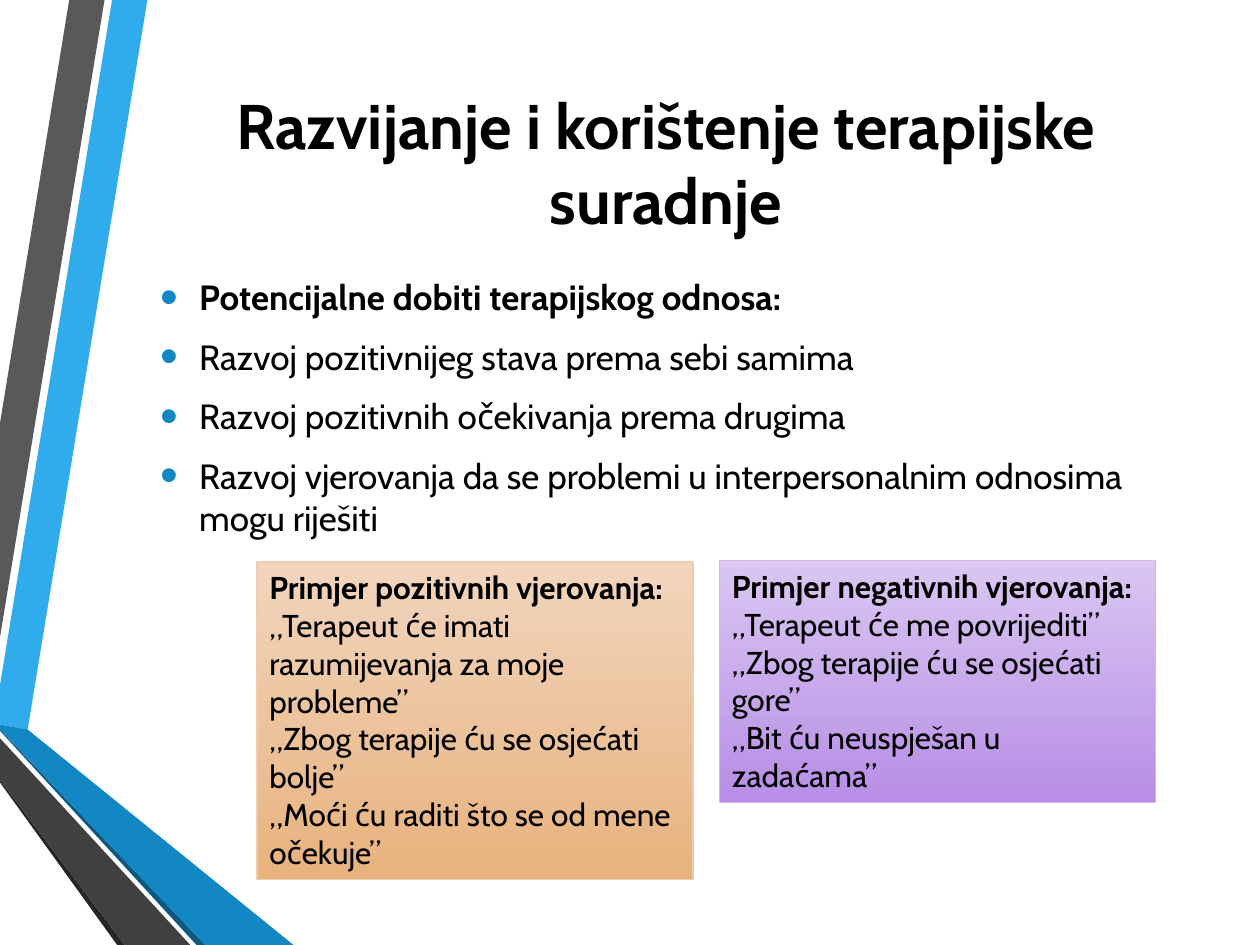
"""Build the slide on developing and using therapeutic collaboration."""
from dataclasses import dataclass

from lxml import etree
from pptx import Presentation
from pptx.dml.color import RGBColor
from pptx.enum.shapes import MSO_SHAPE
from pptx.enum.text import MSO_ANCHOR, MSO_AUTO_SIZE, PP_ALIGN
from pptx.oxml.ns import qn
from pptx.util import Inches, Pt

RECTANGLE = MSO_SHAPE.RECTANGLE
MIDDLE, TOP = MSO_ANCHOR.MIDDLE, MSO_ANCHOR.TOP
NO_AUTOFIT = MSO_AUTO_SIZE.NONE
CENTER, LEFT = PP_ALIGN.CENTER, PP_ALIGN.LEFT


@dataclass(frozen=True)
class Theme:
    font: str = "Cabin"
    text: str = "000000"
    bullet: str = "1287C3"
    title_size: int = 36
    body_size: int = 20
    example_size: int = 18


@dataclass(frozen=True)
class Band:
    color: str
    points: tuple[tuple[float, float], ...]


@dataclass(frozen=True)
class Example:
    left: float
    top: float
    height: float
    gradient: tuple[str, str]
    border: str
    lines: tuple[str, ...]


THEME = Theme()
EXAMPLE_WIDTH = 3.46
BULLET_INDENT = 0.31

BANDS = (
    Band("30ACEC", ((0, 5.44), (0, 5.75), (0.22, 5.79), (1.17, 0), (0.89, 0))),
    Band("595959", ((0.83, 0), (0.55, 0), (0, 3.36), (0, 5.06))),
    Band("262626", ((0, 6.19), (0, 6.21), (0.93, 7.5), (0.99, 7.5))),
    Band("0C5A82", ((0, 5.79), (0, 5.8), (1.56, 7.5), (1.63, 7.5))),
    Band("1287C3", ((0, 5.79), (1.63, 7.5), (2.33, 7.5), (0.22, 5.79), (0, 5.75))),
    Band("404040", ((0, 6.19), (0.99, 7.5), (1.51, 7.5), (0, 5.86))),
)

TITLE = "Razvijanje i korištenje terapijske suradnje"
BENEFITS = (
    "Potencijalne dobiti terapijskog odnosa:",
    "Razvoj pozitivnijeg stava prema sebi samima",
    "Razvoj pozitivnih očekivanja prema drugima",
    "Razvoj vjerovanja da se problemi u interpersonalnim odnosima mogu riješiti",
)
EXAMPLES = (
    Example(2.04, 4.46, 2.52, ("F1D5BD", "E7B27D"), "EECCAF", (
        "Primjer pozitivnih vjerovanja:",
        "„Terapeut će imati razumijevanja za moje probleme”",
        "„Zbog terapije ću se osjećati bolje”",
        "„Moći ću raditi što se od mene očekuje”",
    )),
    Example(5.71, 4.45, 1.92, ("D9C6F1", "B88EE6"), "D0B8EE", (
        "Primjer negativnih vjerovanja:",
        "„Terapeut će me povrijediti”",
        "„Zbog terapije ću se osjećati gore”",
        "„Bit ću neuspješan u zadaćama”",
    )),
)


def rgb(color: str) -> RGBColor:
    return RGBColor.from_string(color)


def place(shape, left: float, top: float, width: float, height: float) -> None:
    shape.left, shape.top = Inches(left), Inches(top)
    shape.width, shape.height = Inches(width), Inches(height)


def write(shape, lines, *, size: int, align=LEFT, anchor=MIDDLE,
          before: float = 0, after: float = 0) -> None:
    """Fill a shape with paragraphs, the first one bold."""
    frame = shape.text_frame
    frame.auto_size = NO_AUTOFIT
    frame.word_wrap = True
    frame.vertical_anchor = anchor
    for index, line in enumerate(lines):
        paragraph = frame.add_paragraph() if index else frame.paragraphs[0]
        paragraph.alignment = align
        paragraph.space_before, paragraph.space_after = Pt(before), Pt(after)
        run = paragraph.add_run()
        run.text = line
        run.font.name = THEME.font
        run.font.size = Pt(size)
        run.font.bold = index == 0
        run.font.color.rgb = rgb(THEME.text)


def add_bullet(paragraph) -> None:
    """Give a paragraph a large coloured bullet with a hanging indent."""
    properties = paragraph._p.get_or_add_pPr()
    properties.set("marL", str(Inches(BULLET_INDENT)))
    properties.set("indent", str(-Inches(BULLET_INDENT)))
    color = etree.SubElement(properties, qn("a:buClr"))
    etree.SubElement(color, qn("a:srgbClr"), val=THEME.bullet)
    etree.SubElement(properties, qn("a:buSzPct"), val="145000")
    etree.SubElement(properties, qn("a:buFont"), typeface="Arial")
    etree.SubElement(properties, qn("a:buChar"), char="•")


def draw_band(slide, band: Band) -> None:
    points = [(Inches(x), Inches(y)) for x, y in band.points]
    builder = slide.shapes.build_freeform(*points[0])
    builder.add_line_segments(points[1:], close=True)
    shape = builder.convert_to_shape()
    shape.shadow.inherit = False
    shape.fill.solid()
    shape.fill.fore_color.rgb = rgb(band.color)
    shape.line.fill.background()


def draw_example(slide, example: Example) -> None:
    shape = slide.shapes.add_shape(
        RECTANGLE, Inches(example.left), Inches(example.top),
        Inches(EXAMPLE_WIDTH), Inches(example.height))
    shape.shadow.inherit = False
    shape.fill.gradient()
    shape.fill.gradient_angle = 270
    for position, (stop, color) in enumerate(zip(shape.fill.gradient_stops, example.gradient)):
        stop.color.rgb = rgb(color)
        stop.position = position
    shape.line.color.rgb = rgb(example.border)
    shape.line.width = Pt(0.75)
    write(shape, example.lines, size=THEME.example_size, anchor=TOP)


def main() -> None:
    presentation = Presentation()
    presentation.slide_width, presentation.slide_height = Inches(10), Inches(7.5)
    slide = presentation.slides.add_slide(presentation.slide_layouts[1])
    for band in BANDS:
        draw_band(slide, band)

    title = slide.shapes.title
    place(title, 1.07, 0.5, 8.43, 1.57)
    write(title, (TITLE,), size=THEME.title_size, align=CENTER)

    body = slide.placeholders[1]
    place(body, 1.17, 1.68, 8.43, 3.64)
    write(body, BENEFITS, size=THEME.body_size, before=4, after=6)
    body.text_frame.margin_bottom = Inches(0.59)
    for paragraph in body.text_frame.paragraphs:
        add_bullet(paragraph)

    for example in EXAMPLES:
        draw_example(slide, example)
    presentation.save("out.pptx")


if __name__ == "__main__":
    main()
